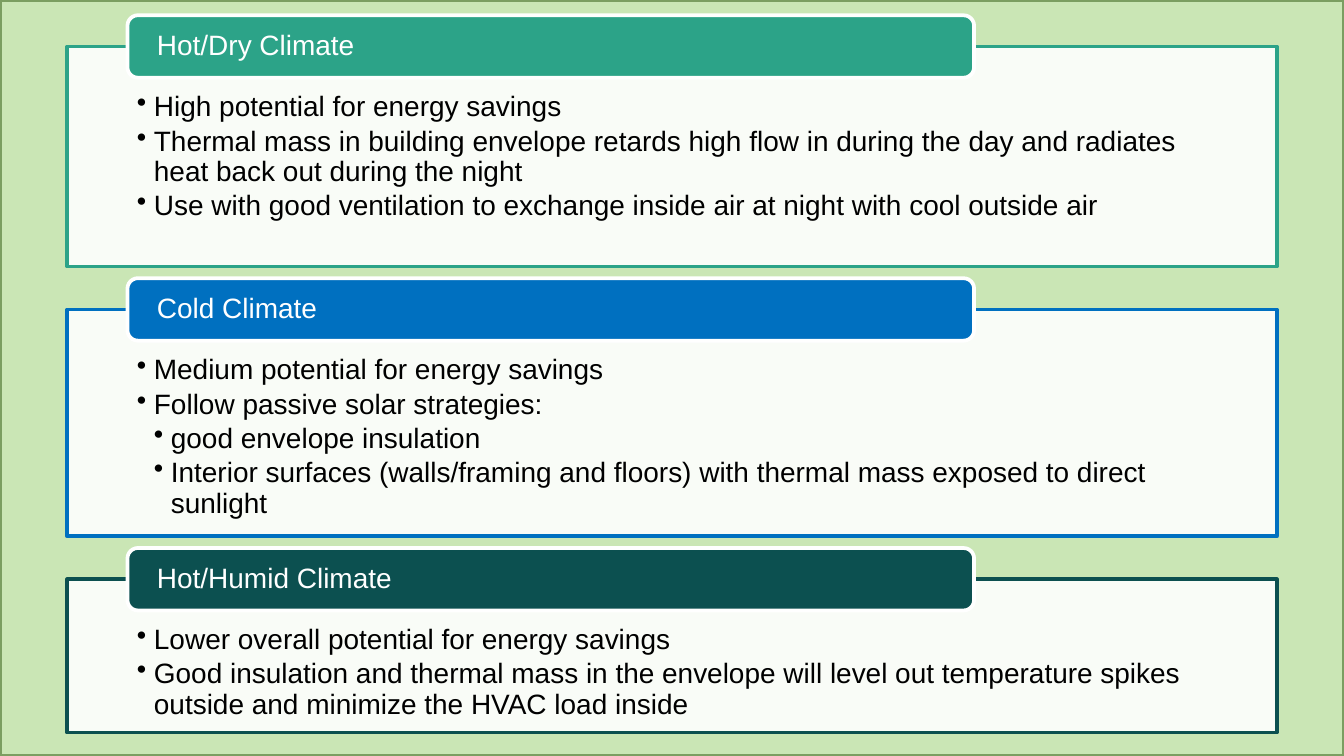
"""Build a slide of energy advice for three climates."""
import lxml.etree
import pptx
import pptx.dml.color
import pptx.enum.shapes
import pptx.enum.text
import pptx.oxml.ns
import pptx.util

Cm = pptx.util.Cm
Pt = pptx.util.Pt
Kind = pptx.enum.shapes.MSO_SHAPE
Anchor = pptx.enum.text.MSO_ANCHOR
Align = pptx.enum.text.PP_ALIGN
qn = pptx.oxml.ns.qn


def paint(code):
    return pptx.dml.color.RGBColor.from_string(code)


def apply(item, look):
    for name, value in look.items():
        setattr(item, name, value)


class Deck:
    font = {"name": "Arial", "size": Pt(15)}
    step = 0.32

    def __init__(self, wide, high):
        self.file = pptx.Presentation()
        apply(self.file, {"slide_width": Cm(wide), "slide_height": Cm(high)})
        self.slide = self.file.slides.add_slide(self.file.slide_layouts[6])

    def shape(self, kind, place, fill, line):
        shape = self.slide.shapes.add_shape(kind, *map(Cm, place))
        shape.shadow.inherit = False
        shape.fill.solid()
        shape.fill.fore_color.rgb = paint(fill)
        shape.line.color.rgb = paint(line)
        shape.line.width = Pt(2)
        return shape

    def frame(self, shape, side, top, base, anchor):
        frame = shape.text_frame
        apply(frame, {"word_wrap": True, "vertical_anchor": anchor,
                      "margin_left": Cm(side), "margin_right": Cm(side),
                      "margin_top": Cm(top), "margin_bottom": Cm(base)})
        return frame

    def label(self, para, text, tint, level=0):
        para.text = text
        apply(para, {"level": level, "alignment": Align.LEFT,
                     "line_spacing": 0.9, "space_after": Pt(2.25)})
        if level:
            self.dot(para, level, tint)
        apply(para.font, self.font)
        para.font.color.rgb = paint(tint)

    def dot(self, para, level, tint):
        props = para._p.get_or_add_pPr()
        props.set("marL", str(Cm(self.step * level)))
        props.set("indent", str(-Cm(self.step)))
        shade = lxml.etree.SubElement(props, qn("a:buClr"))
        lxml.etree.SubElement(shade, qn("a:srgbClr"), val=tint)
        lxml.etree.SubElement(props, qn("a:buChar"), char="•")

    def panel(self, top, high, tint, rows):
        box = self.shape(Kind.RECTANGLE, (1.27, top, 22.86, high), "FFFFFF", tint)
        shade = box._element.spPr.find(qn("a:solidFill")).find(qn("a:srgbClr"))
        lxml.etree.SubElement(shade, qn("a:alpha"), val="90000")
        frame = self.frame(box, 1.32, 0.87, 0.3, Anchor.TOP)
        for spot, (level, text) in enumerate(rows):
            para = frame.add_paragraph() if spot else frame.paragraphs[0]
            self.label(para, text, "000000", level)

    def tab(self, edge, tint, text):
        high = 1.18
        place = (2.41, edge - high / 2, 16, high)
        tab = self.shape(Kind.ROUNDED_RECTANGLE, place, tint, "FFFFFF")
        frame = self.frame(tab, 0.5, 0.06, 0.06, Anchor.MIDDLE)
        self.label(frame.paragraphs[0], text, "FFFFFF")


def main():
    wide, high = 25.4, 14.29
    deck = Deck(wide, high)
    deck.shape(Kind.RECTANGLE, (0, 0, wide, high), "CAE6B5", "7B9E61")
    climes = [
        ("Hot/Dry Climate", "2CA388", 4.16, [
            (1, "High potential for energy savings"),
            (1, "Thermal mass in building envelope retards high flow in "
                "during the day and radiates heat back out during the night"),
            (1, "Use with good ventilation to exchange inside air at night "
                "with cool outside air")]),
        ("Cold Climate", "0070C0", 4.29, [
            (1, "Medium potential for energy savings"),
            (1, "Follow passive solar strategies:"),
            (2, "good envelope insulation"),
            (2, "Interior surfaces (walls/framing and floors) with thermal "
                "mass exposed to direct sunlight")]),
        ("Hot/Humid Climate", "0C5050", 2.9, [
            (1, "Lower overall potential for energy savings"),
            (1, "Good insulation and thermal mass in the envelope will level "
                "out temperature spikes outside and minimize the HVAC load "
                "inside")]),
    ]
    top, gap = 0.88, 0.81
    for title, tint, tall, rows in climes:
        deck.panel(top, tall, tint, rows)
        deck.tab(top, tint, title)
        top += tall + gap
    deck.file.save("out.pptx")


if __name__ == "__main__":
    main()
